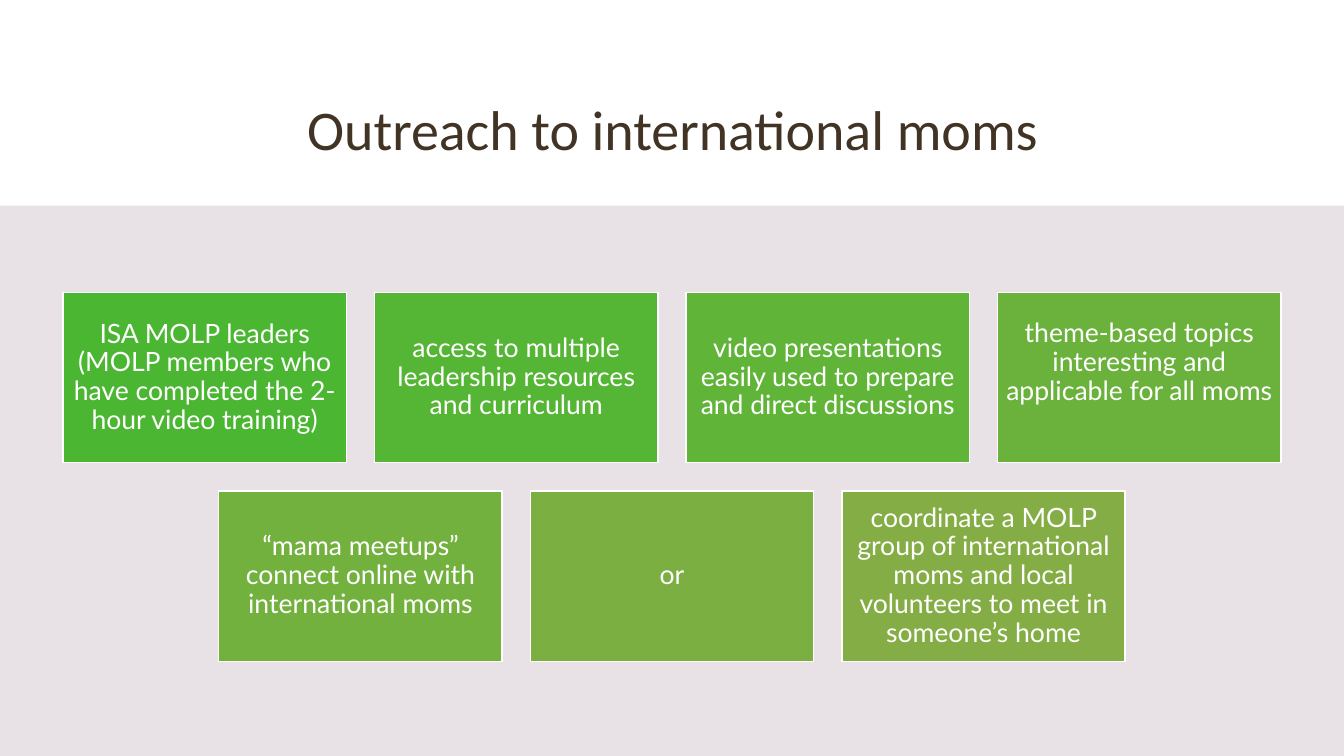
from dataclasses import dataclass

from pptx import Presentation
from pptx.dml.color import RGBColor
from pptx.enum.shapes import MSO_SHAPE
from pptx.enum.text import MSO_ANCHOR, PP_ALIGN
from pptx.util import Inches, Pt

RECT = MSO_SHAPE.RECTANGLE
MIDDLE = MSO_ANCHOR.MIDDLE
CENTER = PP_ALIGN.CENTER

WHITE = RGBColor(0xFF, 0xFF, 0xFF)
BROWN = RGBColor(0x41, 0x34, 0x24)
PANEL = RGBColor(0xE8, 0xE2, 0xE7)

# Grid, in inches
SLIDE_W, SLIDE_H = 13.33, 7.5
PANEL_TOP = 2.04
CARD_W, CARD_H, GAP = 2.81, 1.69, 0.28
CARDS_TOP = 2.9
INSET = 0.08
LINE_H = 0.29


@dataclass
class Card:
    text: str
    fill: RGBColor
    lift: float = 0  # lines left free below the text


ROWS = [
    [
        Card("ISA MOLP leaders (MOLP members who have completed the 2-hour video training)",
             RGBColor(0x4A, 0xB6, 0x32)),
        Card("access to multiple leadership resources and curriculum",
             RGBColor(0x55, 0xB5, 0x35)),
        Card("video presentations easily used to prepare and direct discussions",
             RGBColor(0x60, 0xB4, 0x38)),
        Card("theme-based topics interesting and applicable for all moms",
             RGBColor(0x6A, 0xB2, 0x3B), lift=1),
    ],
    [
        Card("“mama meetups” connect online with international moms",
             RGBColor(0x73, 0xB1, 0x3E)),
        Card("or", RGBColor(0x7C, 0xAF, 0x42)),
        Card("coordinate a MOLP group of international moms and local "
             "volunteers to meet in someone’s home",
             RGBColor(0x84, 0xAE, 0x45)),
    ],
]


def add_rect(s, left: float, top: float, width: float, height: float, fill: RGBColor):
    sp = s.shapes.add_shape(RECT, Inches(left), Inches(top), Inches(width), Inches(height))
    sp.shadow.inherit = False
    sp.fill.solid()
    sp.fill.fore_color.rgb = fill
    sp.line.fill.background()
    return sp


def set_text(sp, text: str, font: str, size: float, color: RGBColor):
    tf = sp.text_frame
    tf.word_wrap = True
    tf.vertical_anchor = MIDDLE
    p = tf.paragraphs[0]
    p.alignment = CENTER
    p.line_spacing = 0.9
    r = p.add_run()
    r.text = text
    for name, value in {"name": font, "size": Pt(size), "bold": False}.items():
        setattr(r.font, name, value)
    r.font.color.rgb = color
    return tf


def add_card(s, card: Card, left: float, top: float) -> None:
    sp = add_rect(s, left, top, CARD_W, CARD_H, card.fill)
    sp.line.color.rgb = WHITE
    sp.line.width = Pt(1)
    tf = set_text(sp, card.text, "Lato", 19, WHITE)
    margins = {"left": INSET, "right": INSET, "top": INSET,
               "bottom": INSET + card.lift * LINE_H}
    for side, value in margins.items():
        setattr(tf, f"margin_{side}", Inches(value))


def main() -> None:
    prs = Presentation()
    prs.slide_width, prs.slide_height = Inches(SLIDE_W), Inches(SLIDE_H)
    s = prs.slides.add_slide(prs.slide_layouts[5])

    # Title
    title = s.shapes.title
    frame = {"left": 1.56, "top": 0.77, "width": 10.22, "height": 1.09}
    for name, value in frame.items():
        setattr(title, name, Inches(value))
    set_text(title, "Outreach to international moms", "Calibri", 40, BROWN)

    # Lower panel
    add_rect(s, 0, PANEL_TOP, SLIDE_W, SLIDE_H - PANEL_TOP, PANEL)

    # Centred rows of cards
    for i, row in enumerate(ROWS):
        row_w = len(row) * (CARD_W + GAP) - GAP
        left = (SLIDE_W - row_w) / 2
        for j, card in enumerate(row):
            add_card(s, card, left + j * (CARD_W + GAP), CARDS_TOP + i * (CARD_H + GAP))

    prs.save("out.pptx")


if __name__ == "__main__":
    main()
